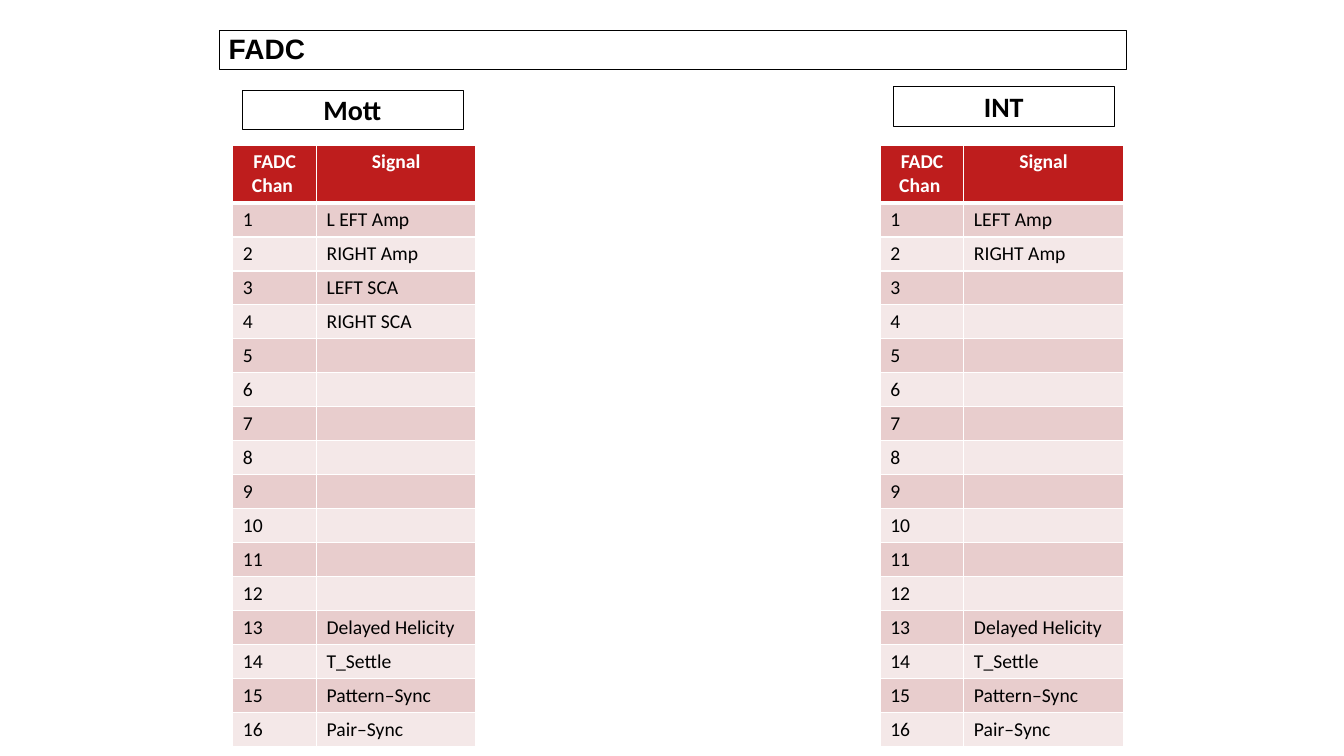
"""Builds the slide of FADC channel signals for Mott and INT."""
import pptx
import pptx.dml.color
import pptx.enum.shapes
import pptx.enum.text
import pptx.oxml.ns
import pptx.util
from lxml import etree

Inches = pptx.util.Inches
Pt = pptx.util.Pt
RGBColor = pptx.dml.color.RGBColor
ALIGN = pptx.enum.text.PP_ALIGN

BLACK = RGBColor(0x00, 0x00, 0x00)
WHITE = RGBColor(0xFF, 0xFF, 0xFF)
RED = RGBColor(0xBE, 0x1D, 0x1D)
ROSE = RGBColor(0xE8, 0xCD, 0xCD)
PALE = RGBColor(0xF4, 0xE8, 0xE8)

COLS = (0.83, 1.58)
ROW = 0.26
COUNT = 16
SYNCS = {13: "Delayed Helicity", 14: "T_Settle",
         15: "Pattern–Sync", 16: "Pair–Sync"}
MOTT = {1: "L EFT Amp", 2: "RIGHT Amp", 3: "LEFT SCA", 4: "RIGHT SCA"}
INT = {1: "LEFT Amp", 2: "RIGHT Amp"}

TITLE = {"name": "Arial", "size": Pt(20), "bold": True}
LABEL = {"name": "Calibri", "size": Pt(20), "bold": True}
HEAD = {"name": "Calibri", "size": Pt(14), "bold": True}
BODY = {"name": "Calibri", "size": Pt(14), "bold": False}


def write(para, text, style, color, align):
    """Put one styled run into a paragraph."""
    para.alignment = align
    if not text:
        size = str(int(style["size"].pt * 100))
        para._p.get_or_add_endParaRPr().set("sz", size)
        return
    run = para.add_run()
    run.text = text
    for key, value in style.items():
        setattr(run.font, key, value)
    run.font.color.rgb = color


def box(slide, place, text, style, align, pitch=1.0):
    """Add a thin outlined box with text."""
    kind = pptx.enum.shapes.MSO_SHAPE.RECTANGLE
    shape = slide.shapes.add_shape(kind, *map(Inches, place))
    shape.shadow.inherit = False
    shape.fill.background()
    shape.line.color.rgb = BLACK
    shape.line.width = Pt(0.25)
    frame = shape.text_frame
    frame.word_wrap = True
    frame.vertical_anchor = pptx.enum.text.MSO_ANCHOR.MIDDLE
    para = frame.paragraphs[0]
    para.line_spacing = pitch
    write(para, text, style, BLACK, align)


def border(cell, widths):
    """Draw white borders on the left, right, top and bottom of a cell."""
    props = cell._tc.get_or_add_tcPr()
    name = pptx.oxml.ns.qn
    for side, width in zip("LRTB", widths):
        line = etree.SubElement(props, name("a:ln" + side), w=str(Pt(width)))
        fill = etree.SubElement(line, name("a:solidFill"))
        etree.SubElement(fill, name("a:srgbClr"), val=str(WHITE))


def table(slide, left, signals):
    """Add a banded table of channels and signals."""
    rows = [("FADC Chan ", "Signal")]
    rows += [(str(n), signals.get(n, "")) for n in range(1, COUNT + 1)]
    size = (left, 1.44, sum(COLS), ROW * len(rows))
    frame = slide.shapes.add_table(len(rows), len(COLS), *map(Inches, size))
    grid = frame.table
    for col, width in zip(grid.columns, COLS):
        col.width = Inches(width)
    for i, texts in enumerate(rows):
        grid.rows[i].height = Inches(ROW)
        top, base = (3 if i == 1 else 1), (3 if i == 0 else 1)
        if i == 0:
            look, back = (HEAD, WHITE, ALIGN.CENTER), RED
        else:
            look, back = (BODY, BLACK, ALIGN.LEFT), ROSE if i % 2 else PALE
        for cell, text in zip(grid.rows[i].cells, texts):
            border(cell, (1, 1, top, base))
            cell.fill.solid()
            cell.fill.fore_color.rgb = back
            write(cell.text_frame.paragraphs[0], text, *look)


def main():
    """Build and save the slide."""
    deck = pptx.Presentation()
    deck.slide_width = Inches(13.33)
    deck.slide_height = Inches(7.5)
    slide = deck.slides.add_slide(deck.slide_layouts[6])
    box(slide, (2.17, 0.3, 9, 0.39), "FADC", TITLE, ALIGN.LEFT, 0.9)
    table(slide, 2.31, MOTT | SYNCS)
    table(slide, 8.73, INT | SYNCS)
    box(slide, (2.4, 0.89, 2.19, 0.39), "Mott", LABEL, ALIGN.CENTER)
    box(slide, (8.86, 0.86, 2.19, 0.39), "INT", LABEL, ALIGN.CENTER)
    deck.save("out.pptx")


if __name__ == "__main__":
    main()
